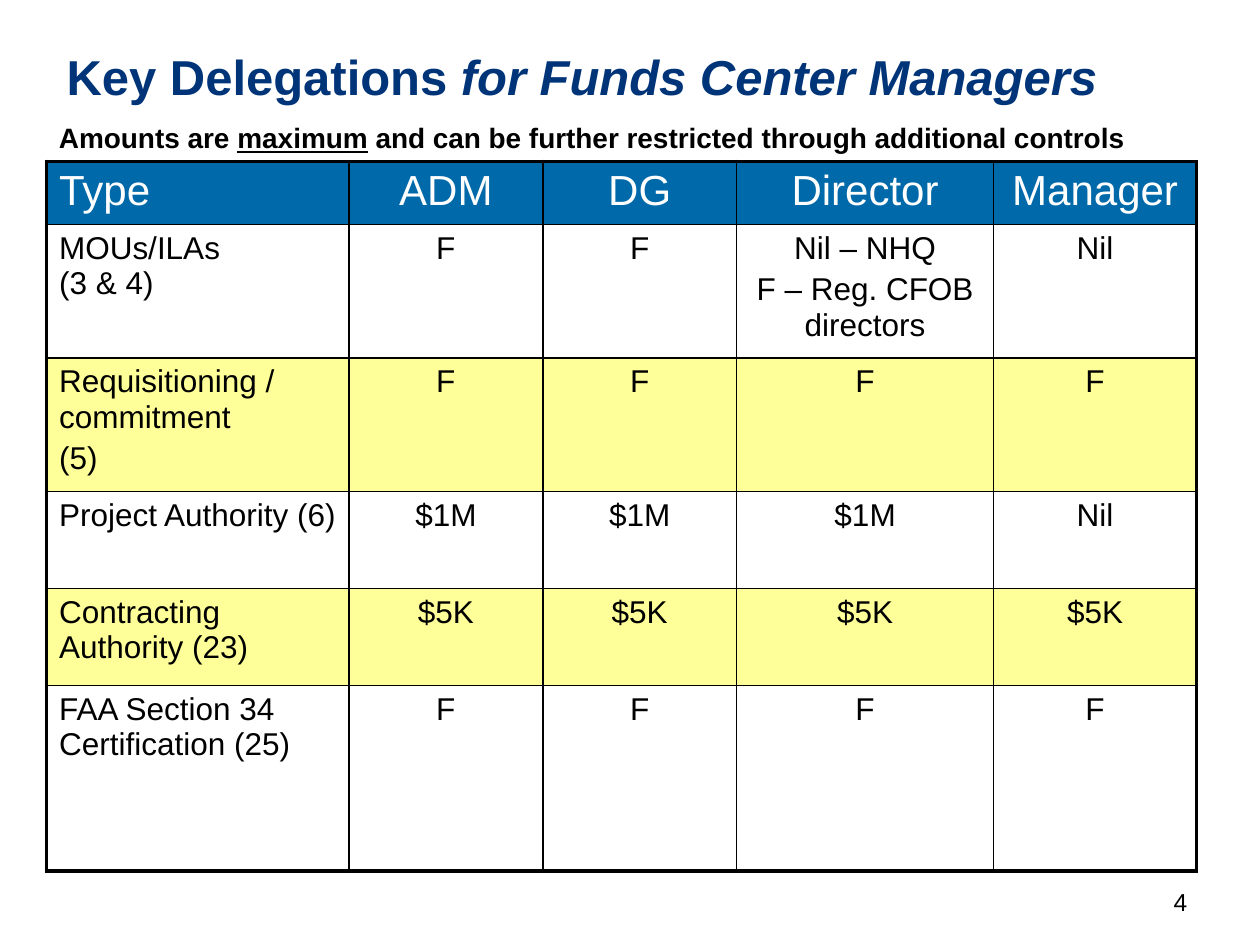
from lxml.etree import SubElement
from pptx import Presentation
from pptx.dml.color import RGBColor
from pptx.enum.text import MSO_ANCHOR, PP_ALIGN
from pptx.oxml.ns import qn
from pptx.util import Pt

BLACK, WHITE, NAVY, BLUE, YELLOW = "000000", "FFFFFF", "003478", "0069AA", "FFFF99"
COLUMN_WIDTHS = [172.8, 110.8, 110.8, 146.8, 116.1]
ROW_HEIGHTS = [36, 76.3, 76.3, 55.5, 55.5, 106]
DELEGATIONS = [
    ["Type", "ADM", "DG", "Director", "Manager"],
    ["MOUs/ILAs\v(3 & 4)", "F", "F", "Nil – NHQ\nF – Reg. CFOB directors", "Nil"],
    ["Requisitioning / commitment\n(5)", "F", "F", "F", "F"],
    ["Project Authority (6)", "$1M", "$1M", "$1M", "Nil"],
    ["Contracting Authority (23)", "$5K", "$5K", "$5K", "$5K"],
    ["FAA Section 34 Certification (25)", "F", "F", "F", "F"],
]


def color(value):
    """Turn a hex string into a colour."""
    return RGBColor.from_string(value)


def style_span(span, size, shade, **formats):
    """Set the font of one run."""
    span.font.color.rgb = color(shade)
    for name, value in {"name": "Arial", "size": Pt(size), **formats}.items():
        setattr(span.font, name, value)


def add_text(page, frame, spans, size, shade, align=PP_ALIGN.LEFT,
             anchor=MSO_ANCHOR.TOP, wrap=True):
    """Add a one-paragraph text box made of (text, formats) spans."""
    box = page.shapes.add_textbox(*map(Pt, frame))
    box.text_frame.word_wrap = wrap
    box.text_frame.vertical_anchor = anchor
    para = box.text_frame.paragraphs[0]
    para.alignment = align
    for text, formats in spans:
        span = para.add_run()
        span.text = text
        style_span(span, size, shade, **formats)


def set_borders(cell, widths):
    """Draw the left, right, top and bottom borders of a cell."""
    properties = cell._tc.get_or_add_tcPr()
    for side, width in zip("LRTB", widths):
        line = SubElement(properties, qn(f"a:ln{side}"), w=str(Pt(width)))
        fill = SubElement(line, qn("a:solidFill"))
        SubElement(fill, qn("a:srgbClr"), val=BLACK)


def fill_cell(cell, text, size, shade, background, align):
    """Write the text of a cell and set its fill."""
    if background:
        cell.fill.solid()
        cell.fill.fore_color.rgb = color(background)
    else:
        cell.fill.background()
    cell.text = text
    for index, para in enumerate(cell.text_frame.paragraphs):
        para.alignment = align
        para.space_before = Pt(0.2 * size if index else 0)
        for span in para.runs:
            style_span(span, size, shade)


def add_delegation_table(page, left, top):
    """Add the table of delegations with a heavy outer frame."""
    rows, columns = len(ROW_HEIGHTS), len(COLUMN_WIDTHS)
    table = page.shapes.add_table(
        rows, columns, Pt(left), Pt(top),
        Pt(sum(COLUMN_WIDTHS)), Pt(sum(ROW_HEIGHTS))).table
    table.first_row = table.horz_banding = False
    for column, width in zip(table.columns, COLUMN_WIDTHS):
        column.width = Pt(width)
    for r, (height, texts) in enumerate(zip(ROW_HEIGHTS, DELEGATIONS)):
        table.rows[r].height = Pt(height)
        size, shade = (18, BLACK) if r else (24, WHITE)
        background = BLUE if r == 0 else YELLOW if r % 2 == 0 else None
        for c, text in enumerate(texts):
            cell = table.cell(r, c)
            outer = (c == 0, c == columns - 1, r == 0, r == rows - 1)
            set_borders(cell, [2.25 if edge else 1 for edge in outer])
            align = PP_ALIGN.CENTER if c else PP_ALIGN.LEFT
            fill_cell(cell, text, size, shade, background, align)


def main():
    """Build the slide and save it."""
    deck = Presentation()
    deck.slide_width, deck.slide_height = Pt(720), Pt(540)
    page = deck.slides.add_slide(deck.slide_layouts[6])
    add_text(page, (535.7, 503.3, 149.8, 20.9), [("4", {})], 14, BLACK,
             align=PP_ALIGN.RIGHT)
    add_text(page, (31, 21.6, 657.4, 43.2),
             [("Key Delegations", {"bold": True}),
              (" for Funds Center Managers", {"bold": True, "italic": True})],
             28, NAVY, anchor=MSO_ANCHOR.MIDDLE)
    add_text(page, (26.6, 65.5, 627.1, 26.6),
             [("Amounts are ", {"bold": True}),
              ("maximum", {"bold": True, "underline": True}),
              (" and can be further restricted through additional controls",
               {"bold": True})],
             16, BLACK, wrap=False)
    add_delegation_table(page, 26.6, 92.2)
    deck.save("out.pptx")


if __name__ == "__main__":
    main()
